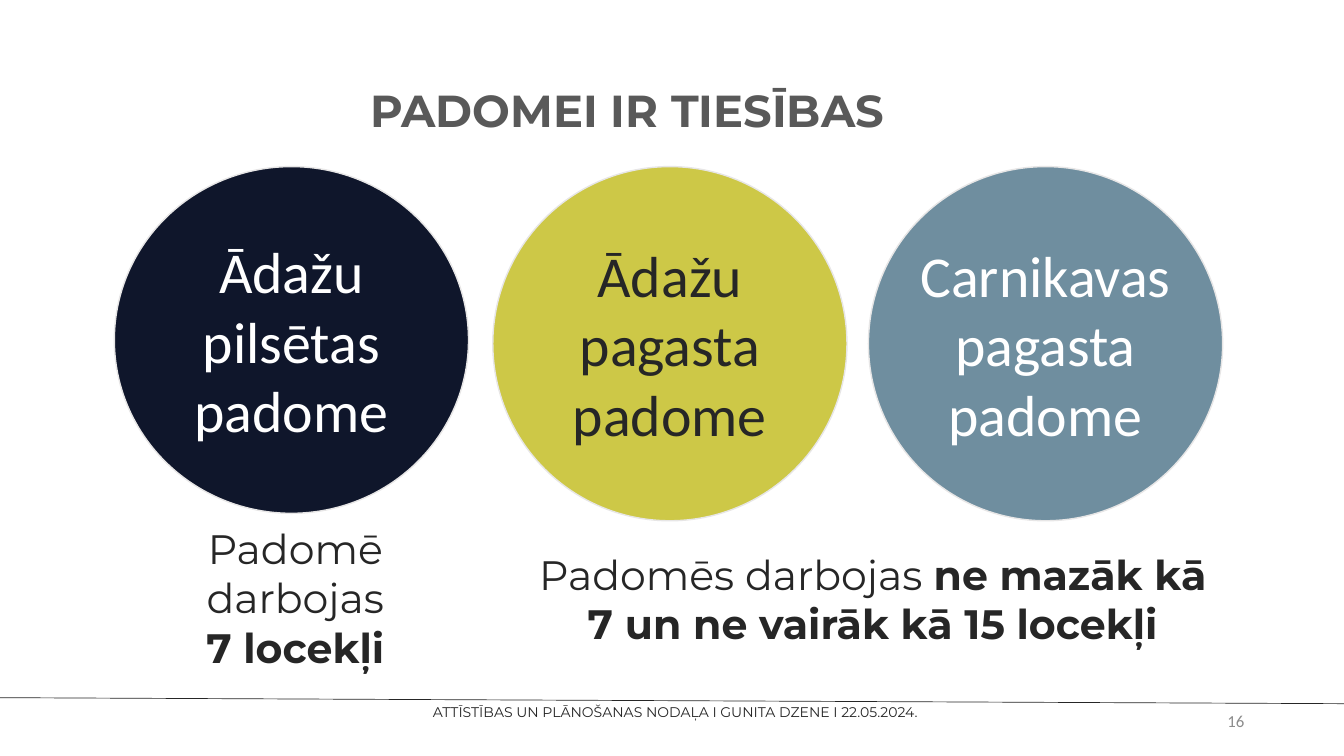
import dataclasses

import pptx
import pptx.dml.color
import pptx.enum.shapes
import pptx.enum.text
import pptx.oxml.ns
import pptx.util
import lxml.etree

Pt = pptx.util.Pt
Align = pptx.enum.text.PP_ALIGN
Anchor = pptx.enum.text.MSO_ANCHOR


@dataclasses.dataclass(frozen=True)
class Theme:
    heading_font: str = "Montserrat"
    body_font: str = "Calibri"
    title: str = "595959"
    dark: str = "262626"
    white: str = "FFFFFF"
    number: str = "8C8C8C"
    outline: str = "E7E6E6"
    navy: str = "0F162B"
    lime: str = "CDC847"
    steel: str = "6F8E9F"
    title_size: float = 48
    circle_size: float = 62
    note_size: float = 44
    footer_size: float = 15
    number_size: float = 18


def rgb(value):
    return pptx.dml.color.RGBColor.from_string(value)


class SlideBuilder:
    def __init__(self, slide, theme):
        self.s = slide
        self.theme = theme

    def fill_text(self, tf, paragraphs, size, color, font, align, inset=None):
        tf.word_wrap = True
        tf.auto_size = pptx.enum.text.MSO_AUTO_SIZE.NONE
        tf.vertical_anchor = Anchor.MIDDLE
        if inset is not None:
            tf.margin_left = tf.margin_right = Pt(inset)
            tf.margin_top = tf.margin_bottom = Pt(inset)
        for i, runs in enumerate(paragraphs):
            p = tf.add_paragraph() if i else tf.paragraphs[0]
            p.alignment = align
            for text, bold in runs:
                r = p.add_run()
                r.text = text
                r.font.name = font
                r.font.size = Pt(size)
                r.font.bold = bold
                r.font.color.rgb = rgb(color)

    def title(self, text, left, top, width, height):
        sp = self.s.shapes.title
        sp.left, sp.top, sp.width, sp.height = map(Pt, (left, top, width, height))
        self.fill_text(sp.text_frame, [[(text, True)]], self.theme.title_size,
                       self.theme.title, self.theme.heading_font, Align.LEFT)
        sp.text_frame.paragraphs[0].line_spacing = 0.9

    def text(self, box, paragraphs, size, color, font, align=Align.CENTER, inset=None):
        sp = self.s.shapes.add_textbox(*map(Pt, box))
        self.fill_text(sp.text_frame, paragraphs, size, color, font, align, inset)
        return sp

    def note(self, box, paragraphs):
        self.text(box, paragraphs, self.theme.note_size, self.theme.dark,
                  self.theme.heading_font)

    def footer(self, box, text):
        sp = self.text(box, [[(text, False)]], self.theme.footer_size,
                       self.theme.dark, self.theme.heading_font, inset=0)
        sp.text_frame.vertical_anchor = Anchor.TOP
        sp.text_frame.paragraphs[0].line_spacing = Pt(18)

    def number(self, box, text):
        self.text(box, [[(text, False)]], self.theme.number_size,
                  self.theme.number, self.theme.body_font, Align.RIGHT)

    def circle(self, left, top, width, height, fill, color, text):
        sp = self.s.shapes.add_shape(pptx.enum.shapes.MSO_SHAPE.OVAL,
                                     *map(Pt, (left, top, width, height)))
        sp.shadow.inherit = False
        sp.fill.solid()
        sp.fill.fore_color.rgb = rgb(fill)
        sp.line.color.rgb = rgb(self.theme.outline)
        sp.line.width = Pt(1.5)
        self.fill_text(sp.text_frame, [[(text, False)]], self.theme.circle_size,
                       color, self.theme.body_font, Align.CENTER, inset=0)

    def rule(self, x1, y1, x2, y2):
        line = self.s.shapes.add_connector(pptx.enum.shapes.MSO_CONNECTOR.STRAIGHT,
                                           *map(Pt, (x1, y1, x2, y2)))
        line.line.color.rgb = rgb(self.theme.dark)
        line.line.width = Pt(0.75)
        lxml.etree.SubElement(line._element.spPr, pptx.oxml.ns.qn("a:effectLst"))


def main():
    prs = pptx.Presentation()
    prs.slide_width, prs.slide_height = Pt(1440), Pt(810)
    theme = Theme()
    b = SlideBuilder(prs.slides.add_slide(prs.slide_layouts[5]), theme)

    b.title("PADOMEI IR TIESĪBAS", 390, 43, 951, 156)
    b.rule(0, 747.5, 1448, 754)
    b.footer((11, 754, 1425.5, 18),
             "ATTĪSTĪBAS UN PLĀNOŠANAS NODAĻA I GUNITA DZENE I 22.05.2024.")

    councils = [
        (122.5, 371.5, theme.navy, theme.white, "Ādažu pilsētas padome"),
        (528, 379.5, theme.lime, theme.dark, "Ādažu pagasta padome"),
        (930.5, 379.5, theme.steel, theme.white, "Carnikavas pagasta padome"),
    ]
    for left, height, fill, color, text in councils:
        b.circle(left, 178.5, 379.5, height, fill, color, text)

    b.number((1016.5, 751, 324, 43), "16")
    b.note((162, 555, 309, 170),
           [[("Padomē darbojas", False)], [("7 locekļi", True)]])
    b.note((548, 551, 774.5, 180),
           [[("Padomēs darbojas ", False), ("ne mazāk kā", True)],
            [("7 un ne vairāk kā 15 locekļi", True)]])

    prs.save("out.pptx")


if __name__ == "__main__":
    main()
